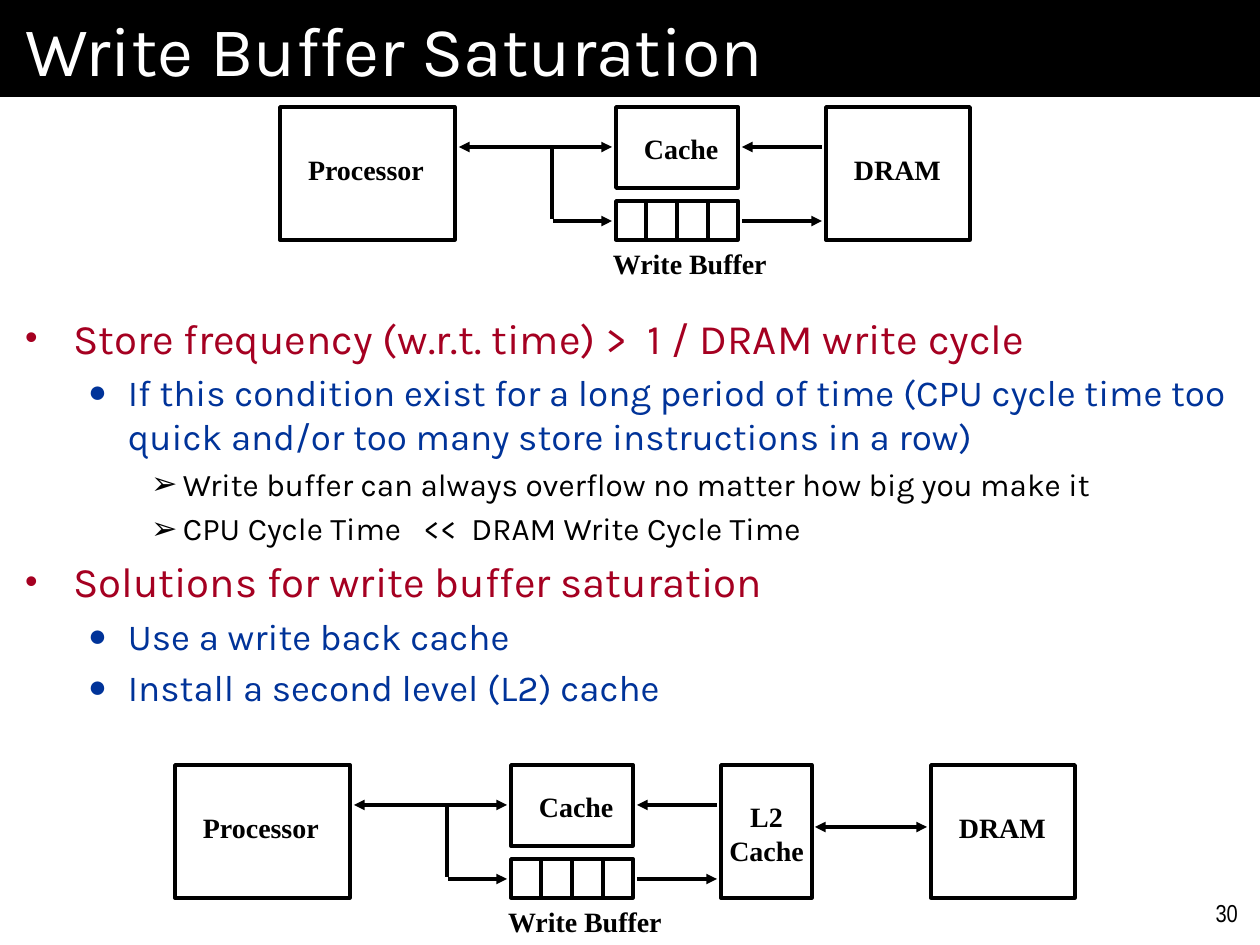
from dataclasses import dataclass

from lxml.etree import SubElement
from pptx import Presentation
from pptx.dml.color import RGBColor
from pptx.enum.shapes import MSO_CONNECTOR, MSO_SHAPE
from pptx.enum.text import MSO_ANCHOR, MSO_AUTO_SIZE, PP_ALIGN
from pptx.oxml.ns import qn
from pptx.util import Pt


@dataclass(frozen=True)
class Level:
    size: int
    color: RGBColor
    bullet: str
    bullet_percent: int
    left: int
    hang: int
    before: int


@dataclass(frozen=True)
class Theme:
    black = RGBColor(0, 0, 0)
    white = RGBColor(255, 255, 255)
    red = RGBColor(0xA5, 0x00, 0x21)
    blue = RGBColor(0x00, 0x33, 0x99)
    main_font = "Karla"
    diagram_font = "Times New Roman"
    number_font = "Arial Narrow"
    title_size = 40
    label_size = 16
    number_size = 14
    line_width = 2
    levels = (
        Level(24, red, "•", 85, 48, 48, 5),
        Level(21, blue, "●", 85, 103, 40, 4),
        Level(18, black, "➢", 100, 158, 32, 4),
    )


THEME = Theme()
BULLETS = [
    (0, "Store frequency (w.r.t. time) >  1 / DRAM write cycle"),
    (1, "If this condition exist for a long period of time (CPU cycle time too "
        "quick and/or too many store instructions in a row)"),
    (2, "Write buffer can always overflow no matter how big you make it"),
    (2, "CPU Cycle Time   <<  DRAM Write Cycle Time"),
    (0, "Solutions for write buffer saturation"),
    (1, "Use a write back cache"),
    (1, "Install a second level (L2) cache"),
]


def px(length):
    return round(length * 914400 / 126)


def set_font(para, name, size, color, bold=False):
    para.font.name = name
    para.font.size = Pt(size)
    para.font.color.rgb = color
    para.font.bold = bold


def place(shape, box):
    shape.left, shape.top, shape.width, shape.height = map(px, box)


def set_margins(frame, side, edge):
    frame.margin_left = frame.margin_right = px(side)
    frame.margin_top = frame.margin_bottom = px(edge)


def add_title(page, box, text):
    title = page.shapes.title
    place(title, box)
    title.fill.solid()
    title.fill.fore_color.rgb = THEME.black
    frame = title.text_frame
    frame.text = text
    frame.auto_size = MSO_AUTO_SIZE.NONE
    frame.vertical_anchor = MSO_ANCHOR.MIDDLE
    set_margins(frame, 25, 6)
    para = frame.paragraphs[0]
    para.alignment = PP_ALIGN.LEFT
    set_font(para, THEME.main_font, THEME.title_size, THEME.white)


def set_bullet(para, level):
    props = para._p.get_or_add_pPr()
    props.set("marL", str(px(level.left)))
    props.set("indent", str(-px(level.hang)))
    color = SubElement(props, qn("a:buClr"))
    SubElement(color, qn("a:srgbClr"), val=str(level.color))
    SubElement(props, qn("a:buSzPct"), val=str(level.bullet_percent * 1000))
    SubElement(props, qn("a:buChar"), char=level.bullet)


def add_bullets(page, box, items):
    body = page.placeholders[1]
    place(body, box)
    frame = body.text_frame
    frame.text = "\n".join(text for _, text in items)
    frame.auto_size = MSO_AUTO_SIZE.NONE
    frame.vertical_anchor = MSO_ANCHOR.TOP
    set_margins(frame, 25, 19)
    for para, (depth, _) in zip(frame.paragraphs, items):
        level = THEME.levels[depth]
        para.level = depth
        para.space_before = Pt(level.before)
        set_bullet(para, level)
        set_font(para, THEME.main_font, level.size, level.color)


def add_text(page, box, text, font, size, align=PP_ALIGN.LEFT, bold=False):
    label = page.shapes.add_textbox(*map(px, box))
    frame = label.text_frame
    frame.text = text
    frame.word_wrap = False
    frame.auto_size = MSO_AUTO_SIZE.SHAPE_TO_FIT_TEXT
    set_margins(frame, 12, 6)
    for para in frame.paragraphs:
        para.alignment = align
        set_font(para, font, size, THEME.black, bold)


def add_block(page, box):
    block = page.shapes.add_shape(MSO_SHAPE.RECTANGLE, *map(px, box))
    block.shadow.inherit = False
    block.fill.background()
    block.line.color.rgb = THEME.black
    block.line.width = Pt(THEME.line_width)


def add_wire(page, start, end, heads=()):
    wire = page.shapes.add_connector(MSO_CONNECTOR.STRAIGHT, *map(px, (*start, *end)))
    wire.line.color.rgb = THEME.black
    wire.line.width = Pt(THEME.line_width)
    outline = wire.line._get_or_add_ln()
    for head in heads:
        SubElement(outline, qn(f"a:{head}"), type="triangle")
    SubElement(wire._element.spPr, qn("a:effectLst"))


def add_memory_diagram(page, left, top, dram, has_l2=False):
    def at(x, y):
        return left + x, top + y

    def block(x, y, width, height):
        add_block(page, (*at(x, y), width, height))

    def label(x, y, width, height, text, align=PP_ALIGN.LEFT):
        add_text(page, (*at(x, y), width, height), text,
                 THEME.diagram_font, THEME.label_size, align, True)

    def wire(x1, y1, x2, y2, *heads):
        add_wire(page, at(x1, y1), at(x2, y2), heads)

    read_y, write_y = 40, 114
    block(0, 0, 175, 133)
    label(16, 40, 144, 45, "Processor")
    block(336, 0, 122, 81)
    label(352, 19, 101, 46, "Cache")
    block(336, 94, 122, 39)
    for divider in range(3):
        x = 366 + 31 * divider
        wire(x, 94, x, 133)
    label(321, 134, 183, 46, "Write Buffer")
    block(dram, 0, 144, 133)
    label(dram + 16, 40, 115, 46, "DRAM")

    wire(179, read_y, 332, read_y, "headEnd", "tailEnd")
    wire(272, read_y + 1, 272, write_y - 2)
    wire(273, write_y, 332, write_y, "tailEnd")
    wire(462, read_y, 542, read_y, "headEnd")
    wire(462, write_y, 542, write_y, "tailEnd")
    if has_l2:
        block(546, 0, 91, 133)
        label(541, 29, 101, 81, "L2\nCache", PP_ALIGN.CENTER)
        wire(640, 62, dram - 4, 62, "headEnd", "tailEnd")


def main():
    deck = Presentation()
    deck.slide_width, deck.slide_height = px(1260), px(945)
    page = deck.slides.add_slide(deck.slide_layouts[1])
    add_title(page, (0, 0, 1260, 97), "Write Buffer Saturation")
    add_bullets(page, (0, 293, 1260, 652), BULLETS)
    add_memory_diagram(page, 280, 107, dram=546)
    add_memory_diagram(page, 175, 765, dram=756, has_l2=True)
    add_text(page, (1197, 892, 53, 42), "30", THEME.number_font,
             THEME.number_size, PP_ALIGN.RIGHT)
    deck.save("out.pptx")


if __name__ == "__main__":
    main()
